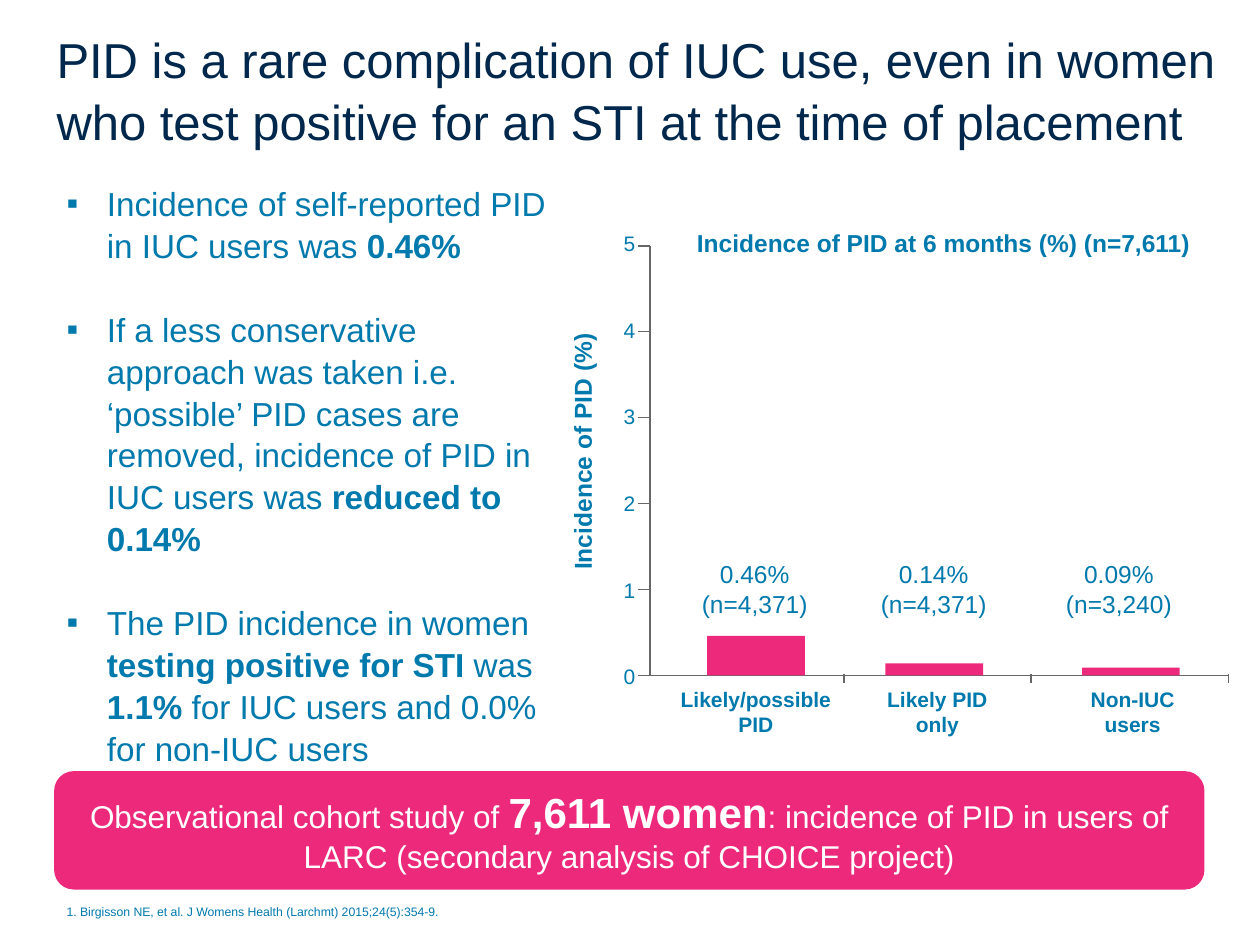
from lxml.etree import SubElement
from pptx import Presentation
from pptx.dml.color import RGBColor
from pptx.enum.shapes import MSO_CONNECTOR, MSO_SHAPE
from pptx.enum.text import MSO_ANCHOR, PP_ALIGN
from pptx.oxml.ns import qn
from pptx.util import Inches, Pt

WIDTH, HEIGHT = Inches(10), Inches(7.5)
COLORS = {"navy": "00274C", "blue": "0079AD", "pink": "EC297B",
          "gray": "676767", "white": "FFFFFF"}

# Chart geometry, in percent of the slide's width or height
AXIS_LEFT, AXIS_RIGHT, TICK_LEFT = 51.6, 97.5, 50.6
AXIS_TOP, AXIS_BOTTOM, AXIS_MAX = 26, 71.47, 5
BAR_WIDTH = 7.75
# Value, cohort size, category lines, then the centres of bar, value label and category
GROUPS = [
    (0.46, "4,371", ["Likely/possible", "PID"], 60, 59.9, 60),
    (0.14, "4,371", ["Likely PID", "only"], 74.15, 74.1, 74.4),
    (0.09, "3,240", ["Non-IUC", "users"], 89.75, 88.8, 89.9),
]
CATEGORY_ENDS = [67, 81.8, AXIS_RIGHT]

# Each paragraph is a list of (text, format changes)
BOLD = {"bold": True}
FINDINGS = [
    [("Incidence of self-reported PID in IUC users was ", {}), ("0.46%", BOLD)],
    [("If a less conservative approach was taken i.e. ‘possible’ PID cases are "
      "removed, incidence of PID in IUC users was ", {}), ("reduced to 0.14%", BOLD)],
    [("The PID incidence in women ", {}), ("testing positive for STI ", BOLD),
     ("was ", {}), ("1.1%", BOLD), (" for IUC users and 0.0% for non-IUC users", {})],
]
STUDY = [("Observational cohort study of ", {}),
         ("7,611 women", {"bold": True, "size": Pt(24)}),
         (": incidence of PID in users of LARC (secondary analysis of CHOICE project)", {})]


def across(share):
    return round(WIDTH * share / 100)


def down(share):
    return round(HEIGHT * share / 100)


def place(left, top, width, height):
    return across(left), down(top), across(width), down(height)


def rgb(name):
    return RGBColor.from_string(COLORS[name])


def apply(target, values):
    for name, value in values.items():
        setattr(target, name, value)


def add_bullet(paragraph):
    properties = paragraph._p.get_or_add_pPr()
    properties.set("marL", str(Inches(0.32)))
    properties.set("indent", str(-Inches(0.32)))
    SubElement(properties, qn("a:buFont"), typeface="Arial")
    SubElement(properties, qn("a:buChar"), char="▪")


def write(frame, paragraphs, size, color="blue", bold=False, bullets=False,
          layout=None, gap=0):
    """Fill a text frame; a plain string is a paragraph of one run."""
    for index, content in enumerate(paragraphs):
        paragraph = frame.add_paragraph() if index else frame.paragraphs[0]
        apply(paragraph, layout or {})
        if index and gap:
            paragraph.space_before = Pt(gap)
        if bullets:
            add_bullet(paragraph)
        runs = [(content, {})] if isinstance(content, str) else content
        for text, changes in runs:
            run = paragraph.add_run()
            run.text = text
            apply(run.font, {"name": "Arial", "size": Pt(size), "bold": bold, **changes})
            run.font.color.rgb = rgb(color)


def add_text(slide, box, paragraphs, size, margins=None, wrap=True,
             anchor=MSO_ANCHOR.TOP, **style):
    shape = slide.shapes.add_textbox(*place(*box))
    frame = shape.text_frame
    apply(frame, {"word_wrap": wrap, "vertical_anchor": anchor})
    if margins is not None:
        horizontal, vertical = Inches(margins[0]), Inches(margins[1])
        apply(frame, {"margin_left": horizontal, "margin_right": horizontal,
                      "margin_top": vertical, "margin_bottom": vertical})
    write(frame, paragraphs, size, **style)
    return shape


def add_label(slide, center, top, width, height, lines, size, bold=False):
    add_text(slide, (center - width / 2, top, width, height), lines, size,
             margins=(0, 0), wrap=False, bold=bold,
             layout={"alignment": PP_ALIGN.CENTER})


def add_block(slide, kind, box):
    shape = slide.shapes.add_shape(kind, *place(*box))
    shape.shadow.inherit = False
    shape.fill.solid()
    shape.fill.fore_color.rgb = rgb("pink")
    shape.line.fill.background()
    return shape


def add_line(slide, x1, y1, x2, y2):
    line = slide.shapes.add_connector(MSO_CONNECTOR.STRAIGHT, across(x1), down(y1),
                                      across(x2), down(y2))
    line.line.color.rgb = rgb("gray")
    line.line.width = Pt(1)
    SubElement(line._element.spPr, qn("a:effectLst"))


def add_axes(slide):
    add_line(slide, AXIS_LEFT, AXIS_TOP, AXIS_LEFT, AXIS_BOTTOM)
    add_line(slide, TICK_LEFT, AXIS_BOTTOM, AXIS_RIGHT, AXIS_BOTTOM)
    # Value ticks and numbers
    for value in range(AXIS_MAX + 1):
        steps = AXIS_MAX - value
        if value:
            tick = AXIS_TOP + steps * (AXIS_BOTTOM - AXIS_TOP) / AXIS_MAX
            add_line(slide, TICK_LEFT, tick, AXIS_LEFT, tick)
        add_text(slide, (49.1, 24.13 + 9.17 * steps, 1.5, 2.8), [str(value)], 12,
                 margins=(0.04, 0.02), wrap=False,
                 layout={"alignment": PP_ALIGN.RIGHT})
    # Category ticks
    for end in CATEGORY_ENDS:
        add_line(slide, end, 71.33, end, 72.27)
    # Axis title, turned to read upwards
    title = add_text(slide, (33, 45.47, 26.6, 4.67), ["Incidence of PID (%)"], 14,
                     bold=True, layout={"alignment": PP_ALIGN.CENTER})
    title.rotation = 270


def add_bars(slide):
    for value, cohort, category, bar, label, name in GROUPS:
        height = (AXIS_BOTTOM - AXIS_TOP) * value / AXIS_MAX
        add_block(slide, MSO_SHAPE.RECTANGLE,
                  (bar - BAR_WIDTH / 2, AXIS_BOTTOM - height, BAR_WIDTH, height))
        add_label(slide, label, 59.2, 8.8, 6.67, [f"{value}%", f"(n={cohort})"], 14)
        add_label(slide, name, 72.67, 12.6, 5.73, category, 12, bold=True)


def add_banner(slide):
    banner = add_block(slide, MSO_SHAPE.ROUNDED_RECTANGLE, (4.3, 81.6, 91.3, 12.53))
    apply(banner.text_frame, {"word_wrap": True, "vertical_anchor": MSO_ANCHOR.MIDDLE})
    write(banner.text_frame, [STUDY], 18, color="white",
          layout={"alignment": PP_ALIGN.CENTER})


def main():
    presentation = Presentation()
    apply(presentation, {"slide_width": WIDTH, "slide_height": HEIGHT})
    slide = presentation.slides.add_slide(presentation.slide_layouts[6])

    # Title and findings
    loose = {"line_spacing": 1.05}
    add_text(slide, (3.5, 0.53, 96.5, 17.73),
             ["PID is a rare complication of IUC use, even in women who test "
              "positive for an STI at the time of placement"],
             28, color="navy", anchor=MSO_ANCHOR.MIDDLE, layout=loose)
    add_text(slide, (4.3, 18.53, 40.2, 60.93), FINDINGS, 19, bullets=True,
             layout=loose, gap=24)

    # Chart drawn to scale, with unevenly spaced categories
    add_axes(slide)
    add_bars(slide)
    add_label(slide, 74.9, 24.13, 40, 3.2,
              ["Incidence of PID at 6 months (%) (n=7,611)"], 14, bold=True)

    # Study banner and reference
    add_banner(slide)
    add_text(slide, (4.3, 95.07, 72.7, 2.93),
             ["1. Birgisson NE, et al. J Womens Health (Larchmt) 2015;24(5):354-9."], 7)
    presentation.save("out.pptx")


if __name__ == "__main__":
    main()
